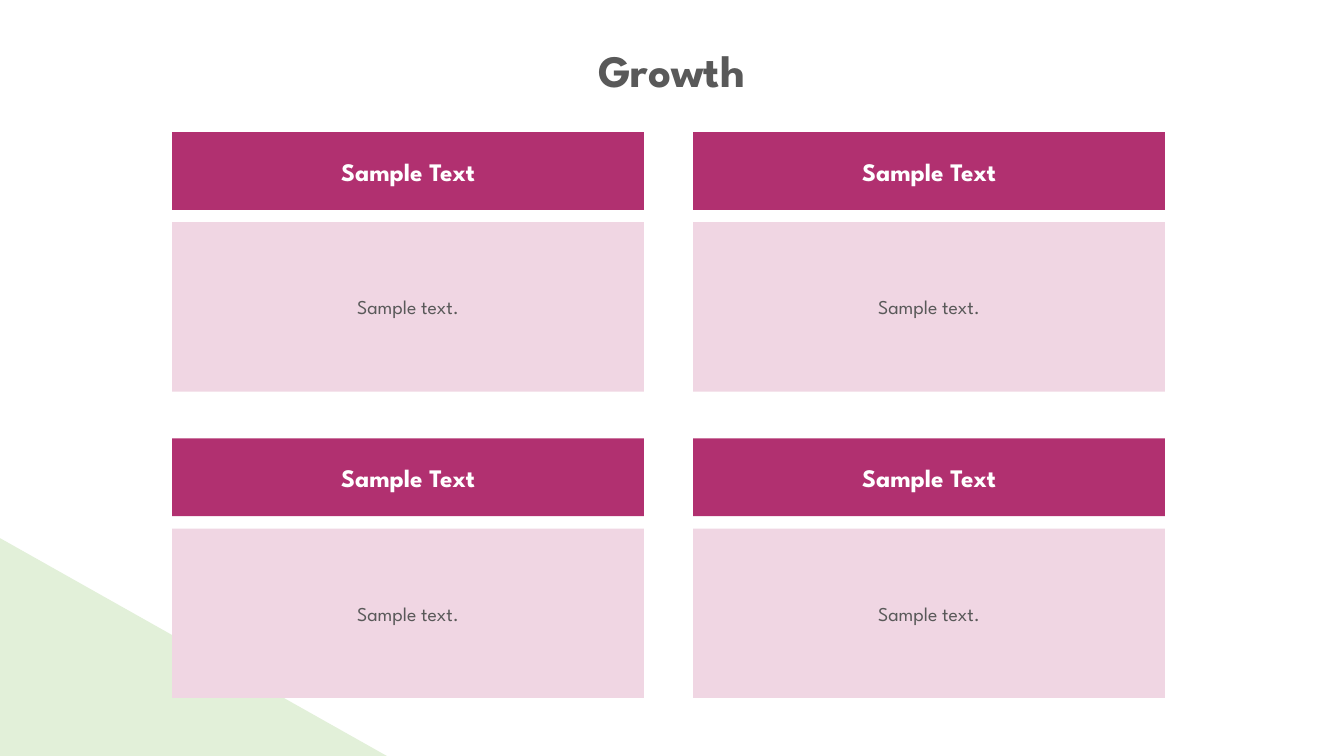
from dataclasses import dataclass

from pptx import Presentation
from pptx.dml.color import RGBColor
from pptx.enum.shapes import MSO_SHAPE
from pptx.enum.text import MSO_ANCHOR, MSO_AUTO_SIZE, PP_ALIGN
from pptx.util import Cm, Pt

RECTANGLE = MSO_SHAPE.RECTANGLE
RIGHT_TRIANGLE = MSO_SHAPE.RIGHT_TRIANGLE
CENTER = PP_ALIGN.CENTER
TOP = MSO_ANCHOR.TOP
MIDDLE = MSO_ANCHOR.MIDDLE
FIT_SHAPE = MSO_AUTO_SIZE.SHAPE_TO_FIT_TEXT
TITLE_ONLY = 5


@dataclass(frozen=True)
class Theme:
    font: str = "League Spartan"
    ink: str = "595959"
    white: str = "FFFFFF"
    header: str = "B13070"
    panel: str = "F0D6E3"
    accent: str = "E2F0D9"
    title_size: int = 32
    header_size: int = 18
    body_size: int = 14


class SlideBuilder:
    def __init__(self, slide, theme):
        self.slide = slide
        self.theme = theme

    def set_text(self, shape, text, size, color, bold, anchor, inset_x, inset_y):
        frame = shape.text_frame
        frame.text = text
        frame.word_wrap = True
        frame.vertical_anchor = anchor
        frame.margin_left = frame.margin_right = Cm(inset_x)
        frame.margin_top = frame.margin_bottom = Cm(inset_y)
        paragraph = frame.paragraphs[0]
        paragraph.alignment = CENTER
        paragraph.font.name = self.theme.font
        paragraph.font.size = Pt(size)
        paragraph.font.bold = bold
        paragraph.font.color.rgb = RGBColor.from_string(color)

    def title(self, text, left, top, width, height):
        heading = self.slide.shapes.title
        heading.left, heading.top = Cm(left), Cm(top)
        heading.width, heading.height = Cm(width), Cm(height)
        self.set_text(heading, text, self.theme.title_size, self.theme.ink, True, TOP, 0.25, 0.13)
        heading.text_frame.auto_size = FIT_SHAPE

    def block(self, kind, left, top, width, height, color):
        block = self.slide.shapes.add_shape(kind, Cm(left), Cm(top), Cm(width), Cm(height))
        block.shadow.inherit = False
        block.fill.solid()
        block.fill.fore_color.rgb = RGBColor.from_string(color)
        block.line.fill.background()
        return block

    def card(self, heading, body, left, top):
        theme = self.theme
        width, header_height, panel_offset, panel_height = 11.89, 1.96, 2.27, 4.27
        header = self.block(RECTANGLE, left, top, width, header_height, theme.header)
        self.set_text(header, heading, theme.header_size, theme.white, True, MIDDLE, 0.76, 0.76)
        panel = self.block(RECTANGLE, left, top + panel_offset, width, panel_height, theme.panel)
        self.set_text(panel, body, theme.body_size, theme.ink, False, MIDDLE, 0.76, 0.51)


def main():
    deck = Presentation()
    deck.slide_width, deck.slide_height = Cm(33.87), Cm(19.05)
    theme = Theme()
    slide = deck.slides.add_slide(deck.slide_layouts[TITLE_ONLY])
    builder = SlideBuilder(slide, theme)

    builder.title("Growth", 7.92, 0.94, 18.01, 1.63)
    builder.block(RIGHT_TRIANGLE, 0, 13.56, 9.75, 5.49, theme.accent)

    cards = [("Sample Text", "Sample text.")] * 4
    first_left, first_top = 4.34, 3.33
    column_pitch, row_pitch = 13.13, 7.72
    for index, (heading, body) in enumerate(cards):
        row, column = divmod(index, 2)
        builder.card(heading, body, first_left + column * column_pitch, first_top + row * row_pitch)

    deck.save("out.pptx")


if __name__ == "__main__":
    main()
